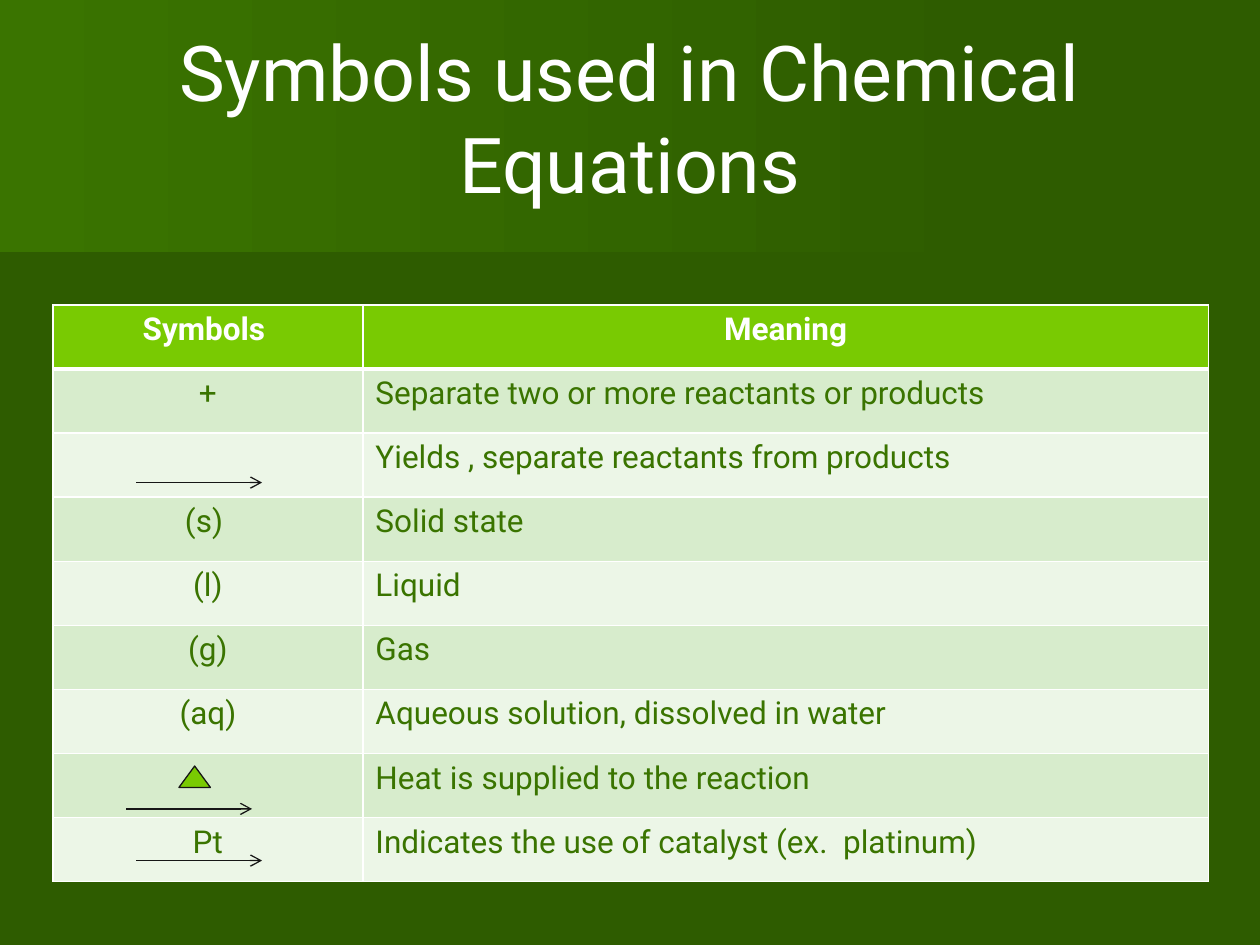
from lxml import etree
from pptx import Presentation
from pptx.dml.color import RGBColor
from pptx.enum.shapes import MSO_CONNECTOR, MSO_SHAPE
from pptx.enum.text import MSO_ANCHOR, PP_ALIGN
from pptx.oxml.ns import qn
from pptx.util import Inches, Pt

CENTER, LEFT = PP_ALIGN.CENTER, PP_ALIGN.LEFT
MIDDLE = MSO_ANCHOR.MIDDLE
STRAIGHT, TRIANGLE = MSO_CONNECTOR.STRAIGHT, MSO_SHAPE.ISOSCELES_TRIANGLE

FONT = "Roboto"
COLORS = {
    "page": "2E5C00", "shade": "2D5A00", "glow": "3A7400", "white": "FFFFFF",
    "header": "79CA02", "odd": "D7ECCC", "even": "ECF6E7",
    "text": "3A7400", "ink": "161616",
}
TITLE = "Symbols used in Chemical Equations"
ROWS = [
    ("Symbols ", "Meaning"),
    ("+", "Separate two or more reactants or products"),
    ("", "Yields , separate reactants from products"),
    ("(s) ", "Solid state"),
    ("(l)", "Liquid"),
    ("(g)", "Gas"),
    ("(aq)", "Aqueous solution, dissolved in water"),
    ("", "Heat is supplied to the reaction"),
    ("Pt", "Indicates the use of catalyst (ex.  platinum)"),
]
BANDS = [  # outline points, colour at the left edge
    ([(0, 1.01), (7.79, 1.01), (7.78, 1.53), (0, 2.17)], "shade"),
    ([(0, 0), (7.92, 0), (7.92, 1.62), (0, 2.08)], "glow"),
]
TABLE_LEFT, TABLE_TOP = 0.42, 2.42
COLUMNS = (2.46, 6.71)
ROW_HEIGHT = 4.58 / len(ROWS)
ARROW_LENGTH = 1
ARROWS = [(1, 6.42), (1.08, 3.83), (1.08, 6.83)]
HEAT_SIGN = (1.42, 6.08, 0.25, 0.17)


def rgb(name):
    return RGBColor.from_string(COLORS[name])


def write(frame, text, size, color, align, bold=False):
    frame.text = text
    para = frame.paragraphs[0]
    para.alignment = align
    for font in [para.font] + [span.font for span in para.runs]:
        font.name, font.size, font.bold = FONT, Pt(size), bold
        font.color.rgb = rgb(color)


def add_band(page, points, color):
    """Draw a slanted band that fades into the page colour."""
    builder = page.shapes.build_freeform(*points[0], scale=Inches(1))
    builder.add_line_segments(points[1:], close=True)
    band = builder.convert_to_shape()
    band.shadow.inherit = False
    band.line.fill.background()
    band.fill.gradient()
    band.fill.gradient_angle = 0
    for stop, name in zip(band.fill.gradient_stops, (color, "page")):
        stop.color.rgb = rgb(name)


def add_borders(cell, bottom_width):
    properties = cell._tc.get_or_add_tcPr()
    for side, width in zip("LRTB", (1, 1, 1, bottom_width)):
        line = etree.SubElement(properties, qn(f"a:ln{side}"), w=str(Pt(width)))
        fill = etree.SubElement(line, qn("a:solidFill"))
        etree.SubElement(fill, qn("a:srgbClr"), val=COLORS["white"])


def add_symbol_table(page):
    frame = page.shapes.add_table(
        len(ROWS), len(COLUMNS), Inches(TABLE_LEFT), Inches(TABLE_TOP),
        Inches(sum(COLUMNS)), Inches(ROW_HEIGHT * len(ROWS)))
    table = frame.table
    for column, width in zip(table.columns, COLUMNS):
        column.width = Inches(width)
    for r, texts in enumerate(ROWS):
        table.rows[r].height = Inches(ROW_HEIGHT)
        header = r == 0
        fill = "header" if header else ("even", "odd")[r % 2]
        for c, text in enumerate(texts):
            cell = table.cell(r, c)
            write(cell.text_frame, text, 18, "white" if header else "text",
                  CENTER if header or c == 0 else LEFT, header)
            add_borders(cell, 3 if header else 1)
            cell.fill.solid()
            cell.fill.fore_color.rgb = rgb(fill)


def set_outline(shape):
    shape.line.color.rgb = rgb("ink")
    shape.line.width = Pt(0.75)


def add_arrow(page, left, top):
    arrow = page.shapes.add_connector(
        STRAIGHT, Inches(left), Inches(top),
        Inches(left + ARROW_LENGTH), Inches(top))
    set_outline(arrow)
    etree.SubElement(arrow.line._get_or_add_ln(), qn("a:tailEnd"), type="arrow")
    etree.SubElement(arrow._element.spPr, qn("a:effectLst"))


def main():
    deck = Presentation()
    deck.slide_width, deck.slide_height = Inches(10), Inches(7.5)
    page = deck.slides.add_slide(deck.slide_layouts[6])
    page.background.fill.solid()
    page.background.fill.fore_color.rgb = rgb("page")

    for points, color in BANDS:
        add_band(page, points, color)

    title = page.shapes.add_textbox(
        Inches(0.5), Inches(0.3), Inches(9), Inches(1.25)).text_frame
    title.word_wrap = True
    title.vertical_anchor = MIDDLE
    write(title, TITLE, 44, "white", CENTER)

    add_symbol_table(page)

    heat = page.shapes.add_shape(TRIANGLE, *map(Inches, HEAT_SIGN))
    heat.shadow.inherit = False
    heat.fill.solid()
    heat.fill.fore_color.rgb = rgb("header")
    set_outline(heat)
    for left, top in ARROWS:
        add_arrow(page, left, top)

    deck.save("out.pptx")


if __name__ == "__main__":
    main()
